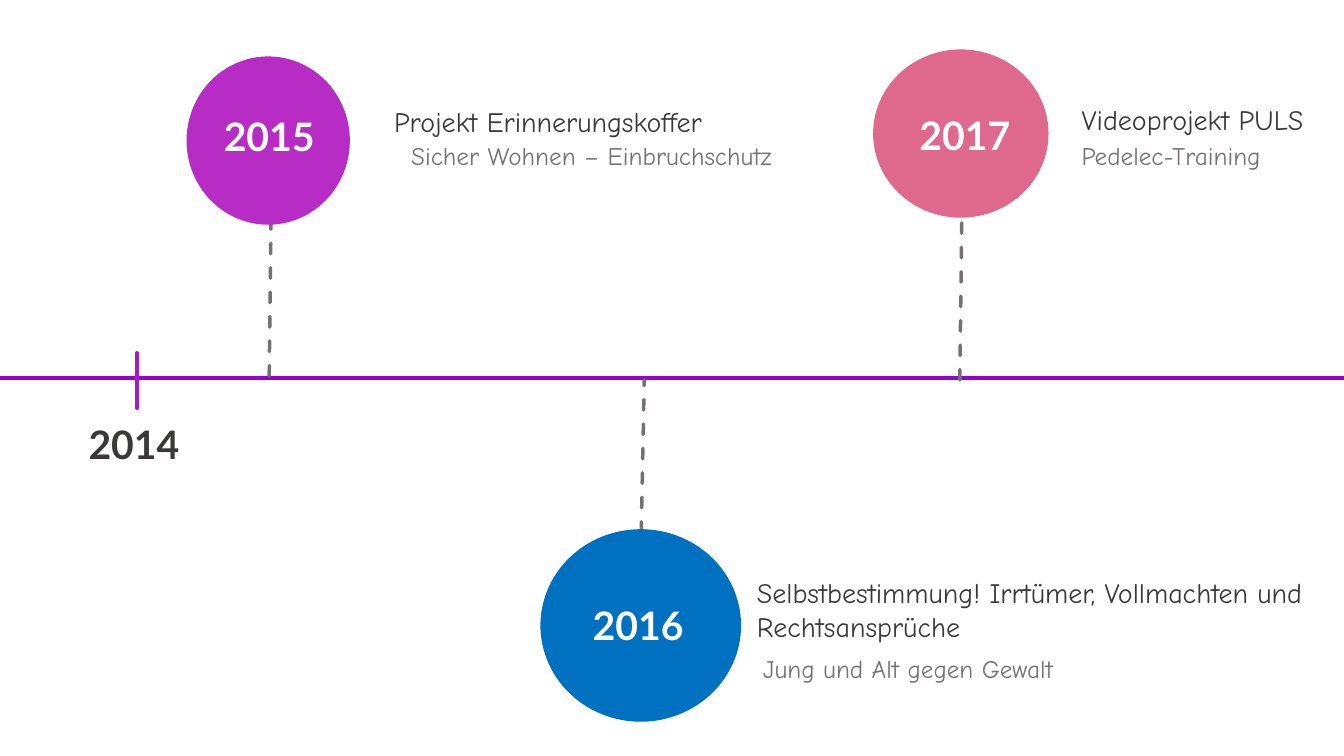
from dataclasses import dataclass

from lxml import etree
from pptx import Presentation
from pptx.dml.color import RGBColor
from pptx.enum.dml import MSO_LINE
from pptx.enum.shapes import MSO_CONNECTOR, MSO_SHAPE
from pptx.enum.text import MSO_AUTO_SIZE, PP_ALIGN
from pptx.oxml.ns import qn
from pptx.slide import Slide
from pptx.util import Inches, Pt

STRAIGHT = MSO_CONNECTOR.STRAIGHT
OVAL = MSO_SHAPE.OVAL
DASH = MSO_LINE.DASH
LEFT, CENTER = PP_ALIGN.LEFT, PP_ALIGN.CENTER
FIT_SHAPE = MSO_AUTO_SIZE.SHAPE_TO_FIT_TEXT
BLANK_LAYOUT = 6


@dataclass(frozen=True)
class TextStyle:
    font: str
    size: float
    color: str
    bold: bool = False


@dataclass(frozen=True)
class Theme:
    axis: str = "9900CC"
    tick: str = "A918CA"
    stem: str = "767171"
    axis_width: float = 3
    mark_width: float = 2.5
    start_year: TextStyle = TextStyle("Lato", 28, "3B3838", True)
    year: TextStyle = TextStyle("Lato", 28, "FFFFFF", True)
    heading: TextStyle = TextStyle("Comic Neue", 20, "3B3838")
    detail: TextStyle = TextStyle("Comic Neue", 18, "767171")


@dataclass(frozen=True)
class Box:
    left: float
    top: float
    width: float
    height: float

    def lengths(self) -> tuple[Inches, ...]:
        return tuple(map(Inches, (self.left, self.top, self.width, self.height)))


@dataclass(frozen=True)
class Line:
    x1: float
    y1: float
    x2: float
    y2: float


@dataclass(frozen=True)
class Label:
    text: str
    box: Box


@dataclass(frozen=True)
class Milestone:
    color: str
    circle: Box
    stem: Line
    year: Label
    heading: Label
    detail: Label
    year_alignment: PP_ALIGN = LEFT


THEME = Theme()
AXIS = Line(0, 3.75, 13.33, 3.75)
START_TICK = Line(1.36, 3.5, 1.36, 4.05)
START_YEAR = Label("2014", Box(0.78, 4.12, 1.23, 0.57))

MILESTONES = [
    Milestone(
        "B62CC4", Box(1.85, 0.56, 1.62, 1.67), Line(2.67, 3.73, 2.69, 2.06),
        Label("2015", Box(1.94, 1.07, 1.46, 0.57)),
        Label("Projekt Erinnerungskoffer", Box(3.81, 0.99, 3.6, 0.44)),
        Label("Sicher Wohnen – Einbruchschutz", Box(3.98, 1.34, 3.98, 0.4)),
        CENTER,
    ),
    Milestone(
        "DF688D", Box(8.66, 0.49, 1.74, 1.67), Line(9.52, 3.77, 9.54, 2.11),
        Label("2017", Box(9.02, 1.06, 1.22, 0.57)),
        Label("Videoprojekt PULS", Box(10.63, 0.97, 2.5, 0.44)),
        Label("Pedelec-Training", Box(10.63, 1.34, 2.09, 0.4)),
    ),
    Milestone(
        "0070C0", Box(5.36, 5.25, 1.99, 1.91), Line(6.36, 5.28, 6.39, 3.77),
        Label("2016", Box(5.78, 5.92, 1.14, 0.57)),
        Label("Selbstbestimmung! Irrtümer, Vollmachten und\nRechtsansprüche",
              Box(7.41, 5.66, 6.04, 0.77)),
        Label("Jung und Alt gegen Gewalt", Box(7.47, 6.43, 3.25, 0.4)),
    ),
]


def add_line(slide: Slide, line: Line, color: str, width: float,
             dashed: bool = False, rounded: bool = True) -> None:
    ends = map(Inches, (line.x1, line.y1, line.x2, line.y2))
    connector = slide.shapes.add_connector(STRAIGHT, *ends)
    connector.line.color.rgb = RGBColor.from_string(color)
    connector.line.width = Pt(width)
    if dashed:
        connector.line.dash_style = DASH
    properties = connector.element.spPr
    if rounded:
        properties.find(qn("a:ln")).set("cap", "rnd")
    etree.SubElement(properties, qn("a:effectLst"))


def add_label(slide: Slide, label: Label, style: TextStyle,
              alignment: PP_ALIGN = LEFT, wrap: bool = False) -> None:
    text_frame = slide.shapes.add_textbox(*label.box.lengths()).text_frame
    text_frame.word_wrap = wrap
    text_frame.auto_size = FIT_SHAPE
    text_frame.text = label.text
    for paragraph in text_frame.paragraphs:
        paragraph.alignment = alignment
        for run in paragraph.runs:
            run.font.name = style.font
            run.font.size = Pt(style.size)
            run.font.bold = style.bold
            run.font.color.rgb = RGBColor.from_string(style.color)


def add_milestone(slide: Slide, milestone: Milestone) -> None:
    add_line(slide, milestone.stem, THEME.stem, THEME.mark_width, dashed=True)
    circle = slide.shapes.add_shape(OVAL, *milestone.circle.lengths())
    circle.shadow.inherit = False
    circle.fill.solid()
    circle.fill.fore_color.rgb = RGBColor.from_string(milestone.color)
    circle.line.fill.background()
    add_label(slide, milestone.year, THEME.year, milestone.year_alignment, wrap=True)
    add_label(slide, milestone.heading, THEME.heading)
    add_label(slide, milestone.detail, THEME.detail)


def main() -> None:
    presentation = Presentation()
    presentation.slide_width = Inches(13.33)
    presentation.slide_height = Inches(7.5)
    slide = presentation.slides.add_slide(presentation.slide_layouts[BLANK_LAYOUT])

    # Time axis with its starting year
    add_line(slide, AXIS, THEME.axis, THEME.axis_width, rounded=False)
    add_line(slide, START_TICK, THEME.tick, THEME.mark_width)
    add_label(slide, START_YEAR, THEME.start_year, wrap=True)

    # Yearly milestones above and below the axis
    for milestone in MILESTONES:
        add_milestone(slide, milestone)

    presentation.save("out.pptx")


if __name__ == "__main__":
    main()
